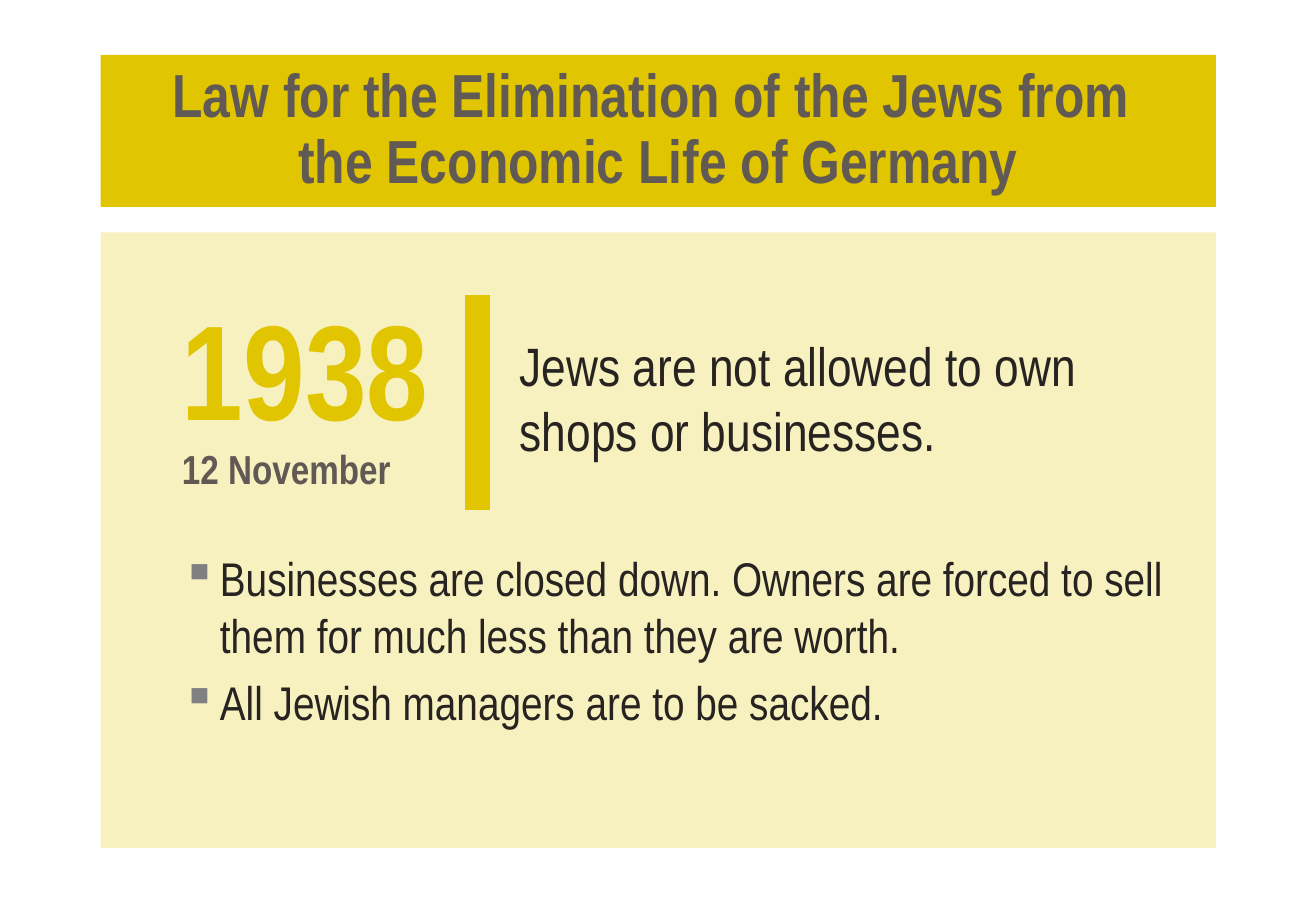
import pptx
import pptx.util
import pptx.dml.color
import pptx.enum.shapes
import pptx.enum.text
import pptx.oxml.ns
import lxml.etree

Pt = pptx.util.Pt
COLOURS = {"yellow": "E1C500", "ink": "262321", "brown": "615954", "bullet": "808080"}
FONT = "Arial Narrow"


def colour(name):
    return pptx.dml.color.RGBColor.from_string(COLOURS[name])


def set_font(font, size, name, bold=False):
    font.name, font.size, font.bold = FONT, Pt(size), bold
    font.color.rgb = colour(name)


deck = pptx.Presentation()
deck.slide_width, deck.slide_height = Pt(780), Pt(540)
page = deck.slides.add_slide(deck.slide_layouts[6])
qn = pptx.oxml.ns.qn

# Pale panel and title band
bands = []
for top, height in ((137.7, 365), (32.6, 90)):
    band = page.shapes.add_shape(pptx.enum.shapes.MSO_SHAPE.RECTANGLE,
                                 Pt(59.6), Pt(top), Pt(661), Pt(height))
    band.shadow.inherit = False
    band.fill.solid()
    band.fill.fore_color.rgb = colour("yellow")
    band.line.fill.background()
    bands.append(band)
panel, title = bands
panel_colour = panel.fill._xPr.find(qn("a:solidFill"))[0]
lxml.etree.SubElement(panel_colour, qn("a:alpha"), val="25000")

# Title
title.text_frame.word_wrap = True
title.text_frame.vertical_anchor = pptx.enum.text.MSO_ANCHOR.MIDDLE
para = title.text_frame.paragraphs[0]
para.text = "Law for the Elimination of the Jews from \vthe Economic Life of Germany"
para.alignment = pptx.enum.text.PP_ALIGN.CENTER
para.line_spacing = 0.9
set_font(para.font, 36, "brown", True)

# Text boxes for the date, the law and its effects
frames = []
for left, top, width, anchor in ((100.8, 168.3, 175.7, "MIDDLE"),
                                 (301, 168, 412, "MIDDLE"),
                                 (100.8, 322, 640.8, "TOP")):
    box = page.shapes.add_textbox(Pt(left), Pt(top), Pt(width), Pt(135.4))
    box.text_frame.word_wrap = True
    box.text_frame.vertical_anchor = pptx.enum.text.MSO_ANCHOR[anchor]
    frames.append(box.text_frame)
date, law, effects = frames

# Date
para = date.paragraphs[0]
para.line_spacing = 0.9
year = para.add_run()
year.text = "1938"
set_font(year.font, 80, "yellow", True)
para.add_line_break()
day = para.add_run()
day.text = "12 November"
set_font(day.font, 24, "brown", True)

# Divider
divider = page.shapes.add_connector(pptx.enum.shapes.MSO_CONNECTOR.STRAIGHT,
                                    Pt(283), Pt(174.8), Pt(283), Pt(302.6))
divider.line.color.rgb = colour("yellow")
divider.line.width = Pt(15)
lxml.etree.SubElement(divider._element.spPr, qn("a:effectLst"))

# Law
para = law.paragraphs[0]
para.text = "Jews are not allowed to own shops or businesses."
set_font(para.font, 32, "ink")

# Bulleted effects
effects.text = ("Businesses are closed down. Owners are forced to sell them "
                "for much less than they are worth.\n"
                "All Jewish managers are to be sacked.")
for para in effects.paragraphs:
    set_font(para.font, 28, "ink")
    para.space_after = Pt(6.3)
    props = para._p.get_or_add_pPr()
    props.set("marL", str(Pt(22.5)))
    props.set("indent", str(-Pt(22.5)))
    bullet_colour = lxml.etree.Element(qn("a:buClr"))
    lxml.etree.SubElement(bullet_colour, qn("a:srgbClr"), val=COLOURS["bullet"])
    bullet = lxml.etree.Element(qn("a:buChar"), char="▪")
    default_font = props.find(qn("a:defRPr"))
    for part in (bullet_colour, bullet):
        default_font.addprevious(part)

deck.save("out.pptx")
